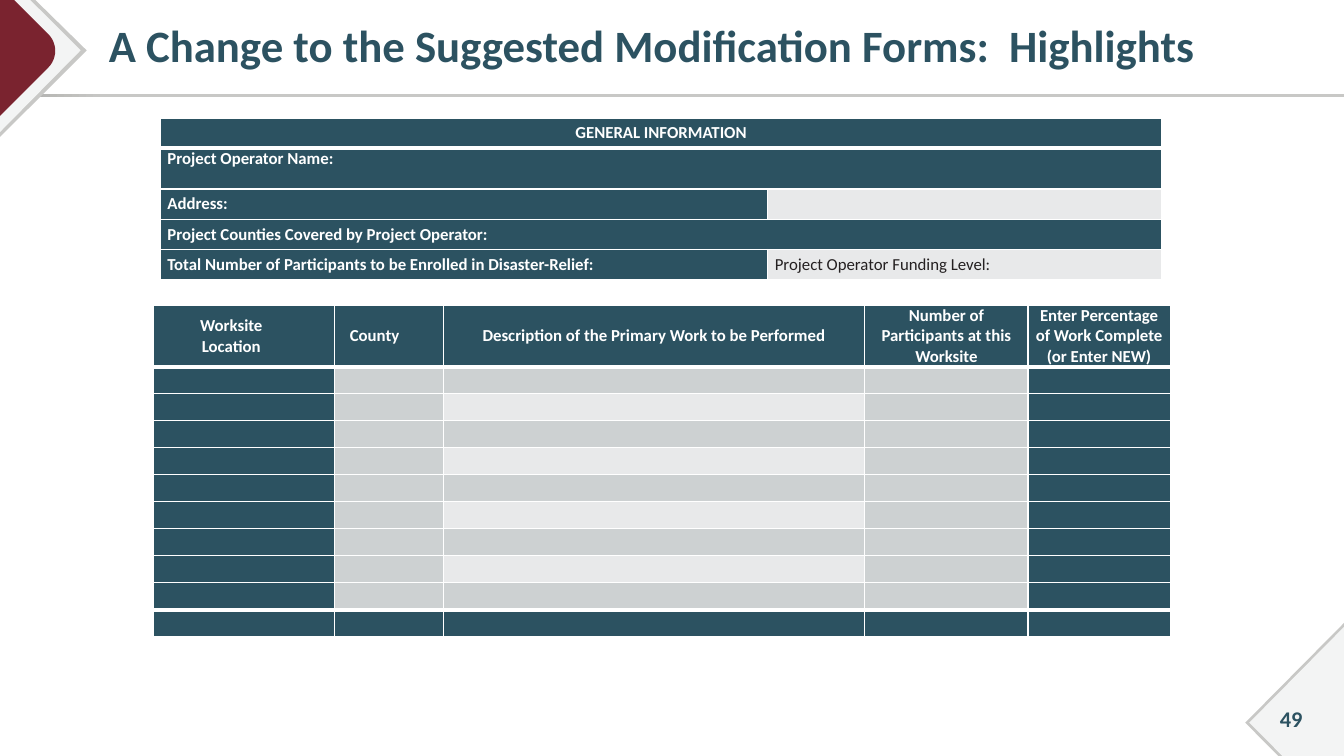
import dataclasses

import pptx
import pptx.dml.color
import pptx.enum.text
import pptx.oxml
import pptx.oxml.ns
import pptx.util

ALIGN = pptx.enum.text.PP_ALIGN
ANCHOR = pptx.enum.text.MSO_ANCHOR
WIDTH = pptx.util.Inches(13.33)
HEIGHT = pptx.util.Inches(7.5)


@dataclasses.dataclass(frozen=True)
class Theme:
    """Colours, type sizes and line widths of the slide."""
    font: str = "Calibri"
    teal: str = "2C5261"
    maroon: str = "7A232F"
    edge: str = "C8C8C6"
    edge_dark: str = "ABABA8"
    panel: str = "F3F4F4"
    band_dark: str = "CDD1D2"
    band_light: str = "E8E9EA"
    white: str = "FFFFFF"
    ink: str = "242021"
    title: int = 32
    number: int = 16
    body: int = 12
    thin: int = 1
    thick: int = 3


THEME = Theme()


def across(share):
    """Return a percentage of the slide width."""
    return round(WIDTH * share / 100)


def down(share):
    """Return a percentage of the slide height."""
    return round(HEIGHT * share / 100)


def rgb(value):
    """Return a colour from its hex value."""
    return pptx.dml.color.RGBColor.from_string(value)


def style_paragraph(p, text, size, color, bold=True, align=ALIGN.LEFT):
    """Fill a paragraph with text in one style."""
    if text:
        p.add_run().text = text
    p.alignment = align
    p.font.name = THEME.font
    p.font.size = pptx.util.Pt(size)
    p.font.bold = bold
    p.font.color.rgb = rgb(color)


def add_text(s, box, text, size, align, inset=0.1):
    """Add a bold teal text box placed by slide shares."""
    x, y, w, h = box
    tf = s.shapes.add_textbox(across(x), down(y), across(w), down(h)).text_frame
    tf.word_wrap = True
    tf.vertical_anchor = ANCHOR.MIDDLE
    tf.margin_left = pptx.util.Inches(inset)
    p = tf.paragraphs[0]
    style_paragraph(p, text, size, THEME.teal, align=align)
    p.line_spacing = 0.9


def add_polygon(s, points, color):
    """Add a filled outline through points given as slide shares."""
    start, *rest = [(across(x), down(y)) for x, y in points]
    builder = s.shapes.build_freeform(*start)
    builder.add_line_segments(rest, close=True)
    sp = builder.convert_to_shape()
    sp.shadow.inherit = False
    sp.fill.solid()
    sp.fill.fore_color.rgb = rgb(color)
    sp.line.fill.background()


def curve(a, b, c, d, steps=12):
    """Return points along a cubic curve."""
    def blend(i, t):
        u = 1 - t
        return u**3 * a[i] + 3 * u * u * t * b[i] + 3 * u * t * t * c[i] + t**3 * d[i]
    return [(blend(0, n / steps), blend(1, n / steps)) for n in range(steps + 1)]


def add_rule(s):
    """Add the shaded rule under the title."""
    sp = s.shapes.add_shape(1, 0, down(12.4), WIDTH, down(0.4))
    sp.shadow.inherit = False
    sp.line.fill.background()
    sp.fill.gradient()
    sp.fill.gradient_angle = 0
    stops = ((0, THEME.edge_dark), (0.08, THEME.edge))
    for stop, (position, color) in zip(sp.fill.gradient_stops, stops):
        stop.position = position
        stop.color.rgb = rgb(color)


def add_corners(s):
    """Add the layered corner ornaments."""
    rounded = curve((3.6, 4.53), (4.28, 5.73), (4.28, 7.73), (3.6, 8.93))
    layers = (
        ([(0, 0), (2.63, 0), (6.45, 6.67), (0, 18.13)], THEME.edge),
        ([(0, 0), (2.25, 0), (6, 6.67), (0, 17.47)], THEME.panel),
        ([(0, 0), (1.05, 0), *rounded, (0, 15.33)], THEME.maroon),
        ([(100, 82.4), (100, 100), (95.12, 100), (92.65, 95.6)], THEME.edge),
        ([(100, 82.93), (100, 100), (95.42, 100), (92.95, 95.6)], THEME.panel),
    )
    for points, color in layers:
        add_polygon(s, points, color)


def add_grid(s, x, y, cols, rows, thick_after):
    """Add a table with white borders, thick below the given rows."""
    table = s.shapes.add_table(len(rows), len(cols), across(x), down(y),
                               across(sum(cols)), down(sum(rows))).table
    table.first_row = table.horz_banding = False
    for column, share in zip(table.columns, cols):
        column.width = across(share)
    for row, share in zip(table.rows, rows):
        row.height = down(share)
    for r in range(len(rows)):
        widths = {"L": THEME.thin, "R": THEME.thin,
                  "T": THEME.thick if r - 1 in thick_after else THEME.thin,
                  "B": THEME.thick if r in thick_after else THEME.thin}
        for c in range(len(cols)):
            set_borders(table.cell(r, c), widths)
    return table


def set_borders(cell, widths):
    """Draw white borders around a cell."""
    ns = pptx.oxml.ns.nsdecls("a")
    for side, width in widths.items():
        cell._tc.get_or_add_tcPr().append(pptx.oxml.parse_xml(
            f'<a:ln{side} {ns} w="{pptx.util.Pt(width)}"><a:solidFill>'
            f'<a:srgbClr val="{THEME.white}"/></a:solidFill></a:ln{side}>'))


def set_cell(cell, fill, text="", color=THEME.white, bold=True,
             align=ALIGN.LEFT, insets=(0.07, 0.07), anchor=ANCHOR.MIDDLE):
    """Set the fill and text of a cell."""
    cell.fill.solid()
    cell.fill.fore_color.rgb = rgb(fill)
    cell.margin_left, cell.margin_right = map(pptx.util.Inches, insets)
    cell.margin_top = cell.margin_bottom = 0
    cell.vertical_anchor = anchor
    style_paragraph(cell.text_frame.paragraphs[0], text, THEME.body, color, bold, align)


def add_general_information(s):
    """Add the general information form."""
    table = add_grid(s, 11.93, 15.6, (45.2, 29.33), (4, 5.4, 4, 4, 4), {0})
    labels = ("GENERAL INFORMATION", "Project Operator Name:", "Address:",
              "Project Counties Covered by Project Operator:",
              "Total Number of Participants to be Enrolled in Disaster-Relief:")
    for r, label in enumerate(labels):
        set_cell(table.cell(r, 0), THEME.teal, label,
                 align=ALIGN.LEFT if r else ALIGN.CENTER,
                 anchor=ANCHOR.TOP if r == 1 else ANCHOR.MIDDLE)
    for r in (0, 1, 3):
        table.cell(r, 0).merge(table.cell(r, 1))
    for r, label in ((2, ""), (4, "Project Operator Funding Level:")):
        set_cell(table.cell(r, 1), THEME.band_light, label, THEME.ink, bold=False)


def add_worksites(s):
    """Add the worksite form with its empty rows."""
    heads = (("Worksite Location", ALIGN.CENTER, (0.34, 0.59)),
             ("County", ALIGN.LEFT, (0.15, 0)),
             ("Description of the Primary Work to be Performed", ALIGN.CENTER, (0, 0)),
             ("Number of Participants at this Worksite", ALIGN.CENTER, (0.15, 0.15)),
             ("Enter Percentage of Work Complete (or Enter NEW)", ALIGN.CENTER, (0.06, 0.06)))
    rows = [8.13] + [3.57] * 10
    last = len(rows) - 1
    table = add_grid(s, 11.4, 40.4, (13.5, 8.1, 31.35, 12.15, 10.58), rows, {0, last - 1})
    for c, (label, align, insets) in enumerate(heads):
        set_cell(table.cell(0, c), THEME.teal, label, align=align, insets=insets)
        for r in range(1, last + 1):
            fill = THEME.band_light if c == 2 and r % 2 == 0 else THEME.band_dark
            if c in (0, len(heads) - 1) or r == last:
                fill = THEME.teal
            set_cell(table.cell(r, c), fill)


def main():
    """Build the slide and save it."""
    prs = pptx.Presentation()
    prs.slide_width, prs.slide_height = WIDTH, HEIGHT
    s = prs.slides.add_slide(prs.slide_layouts[6])
    add_rule(s)
    add_corners(s)
    add_text(s, (93.4, 92.67, 5.33, 5.33), "49", THEME.number, ALIGN.CENTER)
    add_text(s, (6.6, 0.67, 90.92, 11.47),
             "A Change to the Suggested Modification Forms:  Highlights",
             THEME.title, ALIGN.LEFT, inset=0.2)
    add_general_information(s)
    add_worksites(s)
    prs.save("out.pptx")


if __name__ == "__main__":
    main()
